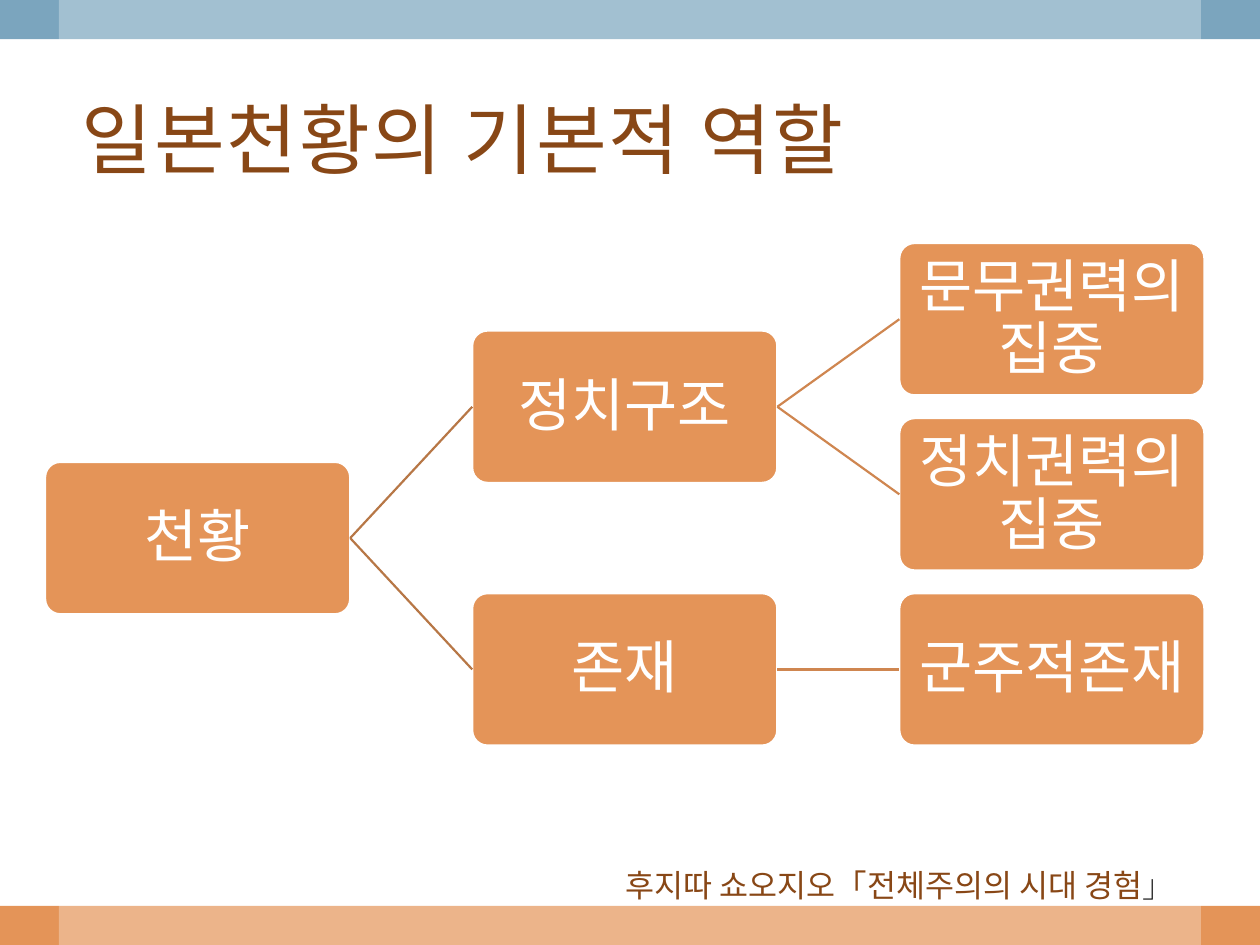
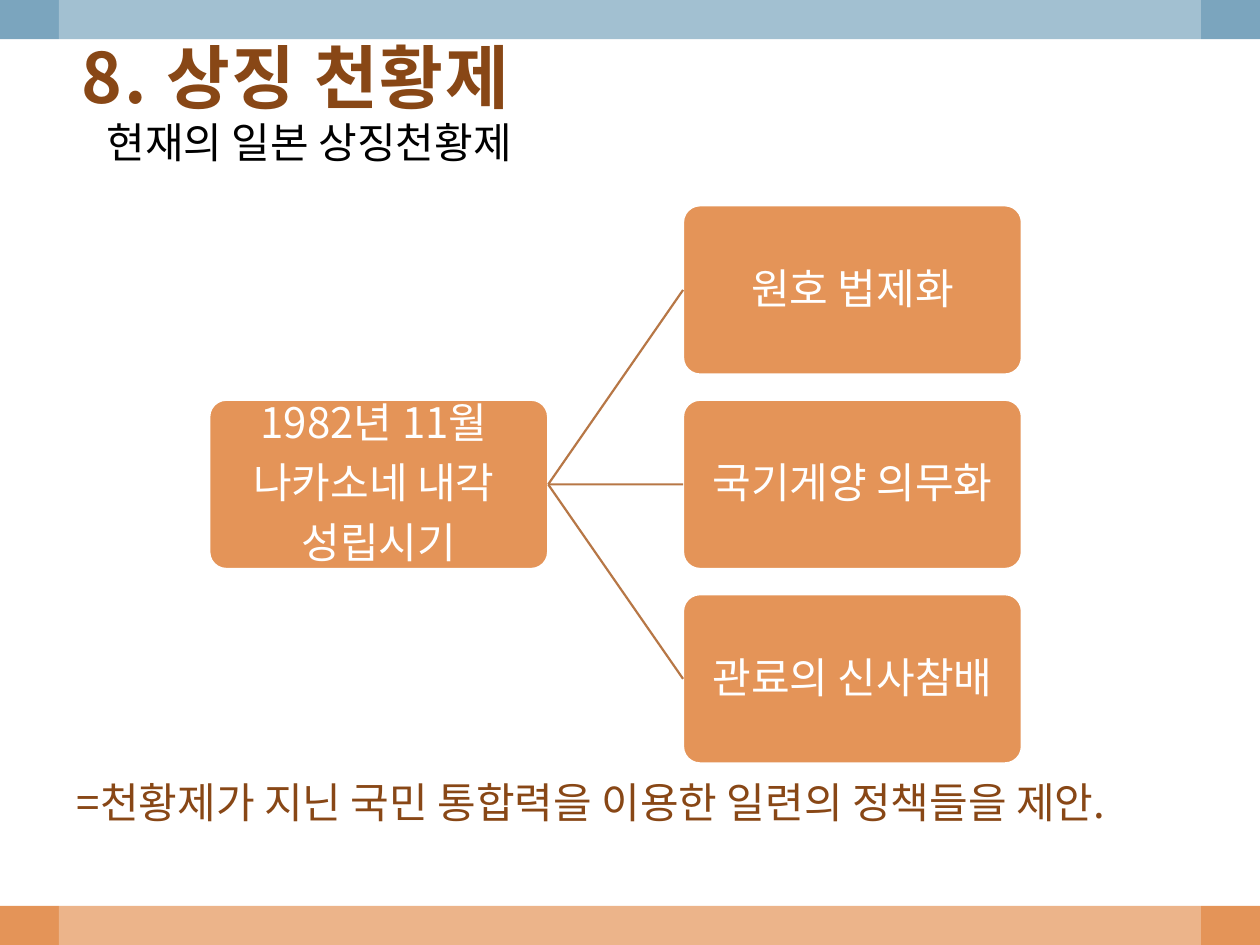
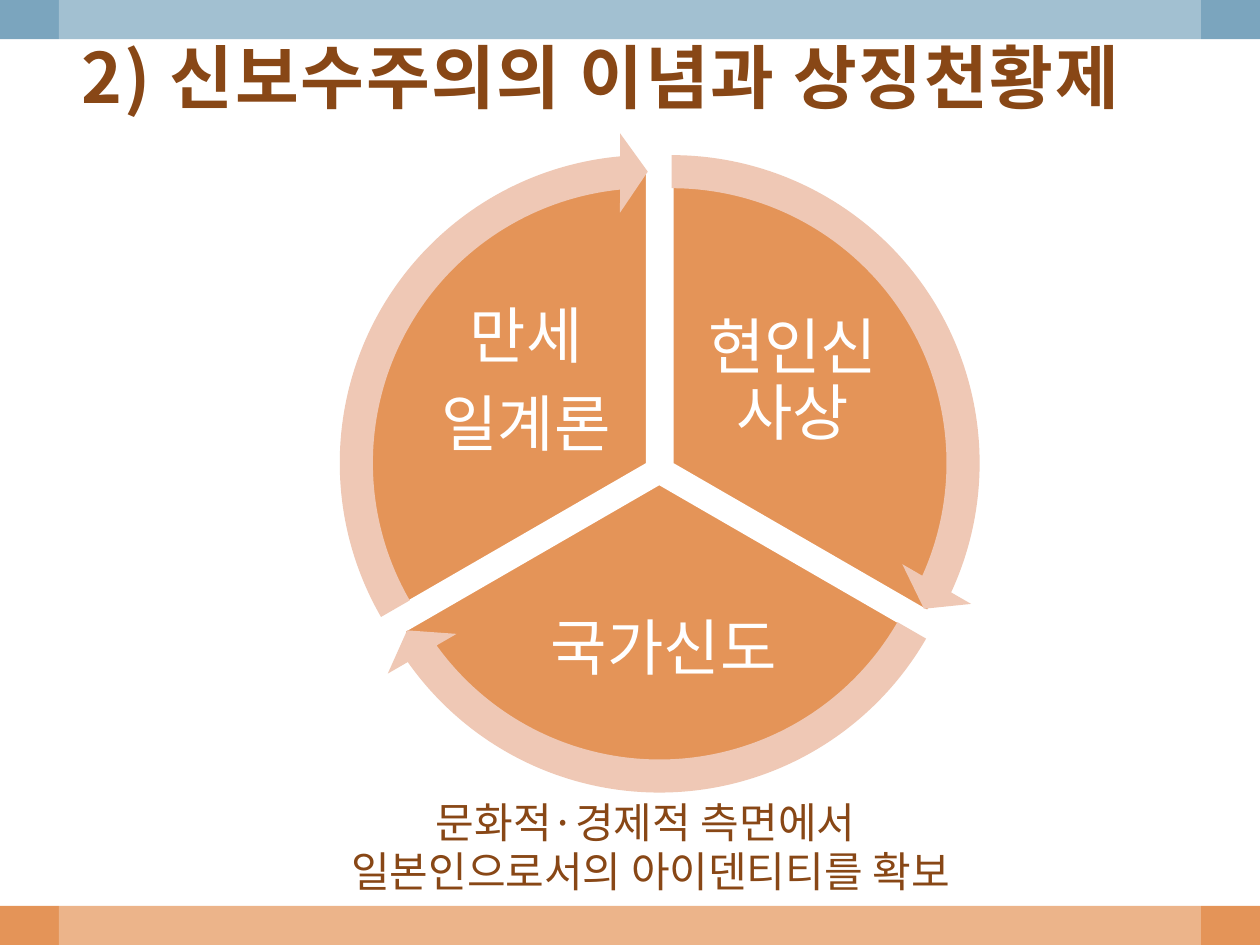
from dataclasses import dataclass

from lxml import etree
from pptx import Presentation
from pptx import util as u
from pptx.dml.color import RGBColor
from pptx.enum import shapes, text
from pptx.oxml.ns import qn

ORANGE, BLUE, WHITE, BLACK = "E49458", "7BA5BE", "FFFFFF", "000000"
BROWN, PEACH = "884716", "EFC8B5"
BRANCH_COLORS = ("B77746", "CF8650")
KOREAN, LATIN = "Noto Sans CJK KR", "Cambria"
PAGE_WIDTH, PAGE_HEIGHT, BAND_HEIGHT = 25.4, 19.05, 0.79
CYCLE_X, CYCLE_Y, CYCLE_SCALE = 13.29, 9.33, 0.95
LEFT, CENTER = text.PP_ALIGN.LEFT, text.PP_ALIGN.CENTER
TOP, MIDDLE = text.MSO_ANCHOR.TOP, text.MSO_ANCHOR.MIDDLE
Shape = shapes.MSO_SHAPE


@dataclass(frozen=True)
class Area:
    left: float
    top: float
    width: float
    height: float

    def lengths(self) -> list:
        return [u.Cm(v) for v in (self.left, self.top, self.width, self.height)]

    def scaled(self, x: float, y: float, factor: float) -> "Area":
        return Area(x + (self.left - x) * factor, y + (self.top - y) * factor,
                    self.width * factor, self.height * factor)


@dataclass(frozen=True)
class Span:
    words: str
    color: str
    font: str = KOREAN


@dataclass(frozen=True)
class Style:
    size: float
    bold: bool = False
    align: int = LEFT
    anchor: int = TOP
    leading: float = 0
    after: float = 0
    tracking: int = 0
    indent: float = 0
    side_inset: float = 0.25
    top_inset: float = 0.13
    bottom_inset: float = 0.13


@dataclass(frozen=True)
class Node:
    words: tuple
    children: tuple = ()


@dataclass(frozen=True)
class Tree:
    root: Node
    left: float
    top: float
    width: float
    height: float
    column_step: float
    row_step: float
    size: float


@dataclass(frozen=True)
class Sector:
    words: tuple
    pie: tuple
    pie_angles: tuple
    arrow: tuple
    arrow_angles: tuple
    label: Area


def color(value: str) -> RGBColor:
    return RGBColor.from_string(value)


def apply(target, values: dict) -> None:
    for name, value in values.items():
        setattr(target, name, value)


def caption_style(size: float, **extra) -> Style:
    return Style(size, leading=1.17, **{"top_inset": 0.15, **extra})


def node_style(size: float, inset: float) -> Style:
    return Style(size, align=CENTER, anchor=MIDDLE, leading=1.08, after=0.35,
                 side_inset=inset, top_inset=inset, bottom_inset=inset)


def write(box, lines: list, style: Style) -> None:
    frame = box.text_frame
    apply(frame, {
        "word_wrap": True,
        "vertical_anchor": style.anchor,
        "margin_left": u.Cm(style.side_inset),
        "margin_right": u.Cm(style.side_inset),
        "margin_top": u.Cm(style.top_inset),
        "margin_bottom": u.Cm(style.bottom_inset),
    })
    for index, line in enumerate(lines):
        para = frame.add_paragraph() if index else frame.paragraphs[0]
        apply(para, {
            "alignment": style.align,
            "space_after": u.Pt(style.after * style.size),
            "line_spacing": u.Pt(style.leading * style.size) if style.leading else None,
        })
        if style.indent:
            para._p.get_or_add_pPr().set("marL", str(u.Cm(style.indent)))
        for span in line:
            run = para.add_run()
            run.text = span.words
            apply(run.font, {"size": u.Pt(style.size), "bold": style.bold,
                             "name": span.font})
            run.font.color.rgb = color(span.color)
            props = run._r.get_or_add_rPr()
            etree.SubElement(props, qn("a:ea")).set("typeface", span.font)
            if style.tracking:
                props.set("spc", str(style.tracking))


def plain(words: tuple, shade: str) -> list:
    return [[Span(line, shade)] for line in words]


def add_text(page, area: Area, lines: list, style: Style) -> None:
    write(page.shapes.add_textbox(*area.lengths()), lines, style)


def add_figure(page, kind, area: Area, fill: str, outline: str = "",
               adjustments: tuple = (), opacity: int = 100):
    figure = page.shapes.add_shape(kind, *area.lengths())
    figure.shadow.inherit = False
    figure.fill.solid()
    figure.fill.fore_color.rgb = color(fill)
    if opacity < 100:
        shade = figure._element.spPr.find(qn("a:solidFill"))[0]
        etree.SubElement(shade, qn("a:alpha")).set("val", str(opacity * 1000))
    if outline:
        figure.line.color.rgb = color(outline)
        figure.line.width = u.Pt(1.25)
    else:
        figure.line.fill.background()
    for index, value in enumerate(adjustments):
        figure.adjustments[index] = value
    return figure


def add_branch(page, parent, child, shade: str) -> None:
    branch = page.shapes.add_connector(shapes.MSO_CONNECTOR.STRAIGHT, 0, 0, 0, 0)
    branch.begin_connect(parent, 3)
    branch.end_connect(child, 1)
    branch.line.color.rgb = color(shade)
    branch.line.width = u.Pt(1.25)
    etree.SubElement(branch._element.spPr, qn("a:effectLst"))


def add_tree(page, tree: Tree) -> None:
    next_row = 0

    def grow(node: Node, depth: int):
        nonlocal next_row
        children = [grow(child, depth + 1) for child in node.children]
        if children:
            top = (children[0].top + children[-1].top) / 2 / u.Cm(1)
        else:
            top = tree.top + next_row * tree.row_step
            next_row += 1
        area = Area(tree.left + depth * tree.column_step, top, tree.width, tree.height)
        box = add_figure(page, Shape.ROUNDED_RECTANGLE, area, ORANGE, WHITE, (0.1,))
        write(box, plain(node.words, WHITE), node_style(tree.size, 0.05))
        for child in children:
            add_branch(page, box, child, BRANCH_COLORS[depth])
        return box

    grow(tree.root, 0)


def add_cycle(page, sectors: tuple) -> None:
    pie_size, arrow_size = 12.5, 14.05

    def fit(area: Area) -> Area:
        return area.scaled(CYCLE_X, CYCLE_Y, CYCLE_SCALE)

    for sector in sectors:
        add_figure(page, Shape.PIE, fit(Area(*sector.pie, pie_size, pie_size)),
                   ORANGE, WHITE, sector.pie_angles)
        add_text(page, fit(sector.label), plain(sector.words, WHITE),
                 node_style(35, 0.13))
    for sector in sectors:
        add_figure(page, Shape.CIRCULAR_ARROW,
                   fit(Area(*sector.arrow, arrow_size, arrow_size)), PEACH,
                   adjustments=(0.05, 3.28, *sector.arrow_angles, 0.06))


def add_page(deck, title: str, area: Area, size: float, bold: bool):
    page = deck.slides.add_slide(deck.slide_layouts[6])
    for top, fill in ((PAGE_HEIGHT - BAND_HEIGHT, ORANGE), (0, BLUE)):
        add_figure(page, Shape.RECTANGLE, Area(0, top, PAGE_WIDTH, BAND_HEIGHT), fill)
    add_figure(page, Shape.RECTANGLE, Area(1.19, 0, 23.02, PAGE_HEIGHT), WHITE, opacity=30)
    add_text(page, area, plain((title,), BROWN),
             Style(size, bold, anchor=MIDDLE, tracking=100))
    return page


ROLES = Tree(
    Node(("천황",), (
        Node(("정치구조",), (Node(("문무권력의 집중",)), Node(("정치권력의 집중",)))),
        Node(("존재",), (Node(("군주적존재",)),)),
    )),
    left=0.91, top=4.9, width=6.15, height=3.07,
    column_step=8.61, row_step=3.53, size=33,
)

POLICIES = Tree(
    Node(("1982년 11월 ", "나카소네 내각 ", "성립시기"), (
        Node(("원호 법제화",)), Node(("국기게양 의무화",)), Node(("관료의 신사참배",)),
    )),
    left=4.22, top=4.14, width=6.83, height=3.41,
    column_step=9.55, row_step=3.92, size=24,
)

IDEOLOGY = (
    Sector(("현인신 사상",), (7.32, 3.1), (162, 18), (6.53, 2.31), (14.73, 161.99),
           Area(13.89, 5.74, 4.47, 3.73)),
    Sector(("국가신도",), (7.04, 3.53), (18, 90), (6.27, 2.77), (86.72, 18),
           Area(10.03, 11.66, 6.71, 3.28)),
    Sector(("만세", "일계론"), (6.78, 3.1), (90, 162), (6.02, 2.31), (158.73, 90),
           Area(8.23, 5.74, 4.47, 3.73)),
)


def main() -> None:
    deck = Presentation()
    apply(deck, {"slide_width": u.Cm(PAGE_WIDTH), "slide_height": u.Cm(PAGE_HEIGHT)})
    high_title = Area(1.4, 0.38, 24, 2.29)

    page = add_page(deck, "일본천황의 기본적 역할", Area(1.4, 1.19, 22.73, 3.18), 44, False)
    add_text(page, Area(7.29, 17.32, 18.11, 1.02),
             [[Span("후지따 쇼오지오「전체주의의 시대 경험", BROWN), Span("」", BLACK, LATIN)]],
             caption_style(18, indent=5.08))
    add_tree(page, ROLES)

    page = add_page(deck, "8. 상징 천황제", high_title, 39.6, True)
    add_text(page, Area(1.9, 2.13, 21.59, 2.06),
             plain(("현재의 일본 상징천황제",), BLACK), caption_style(24, top_inset=0.25))
    add_tree(page, POLICIES)
    add_text(page, Area(1.3, 15.52, 24.1, 2.31),
             plain(("=천황제가 지닌 국민 통합력을 이용한 일련의 정책들을 제안.",), BROWN),
             caption_style(24))

    page = add_page(deck, "2) 신보수주의의 이념과 상징천황제", high_title, 39.6, True)
    add_cycle(page, IDEOLOGY)
    add_text(page, Area(2.11, 15.93, 22, 3.07),
             plain(("문화적·경제적 측면에서 ", "일본인으로서의 아이덴티티를 확보"), BROWN),
             caption_style(24, align=CENTER))

    deck.save("out.pptx")


if __name__ == "__main__":
    main()
